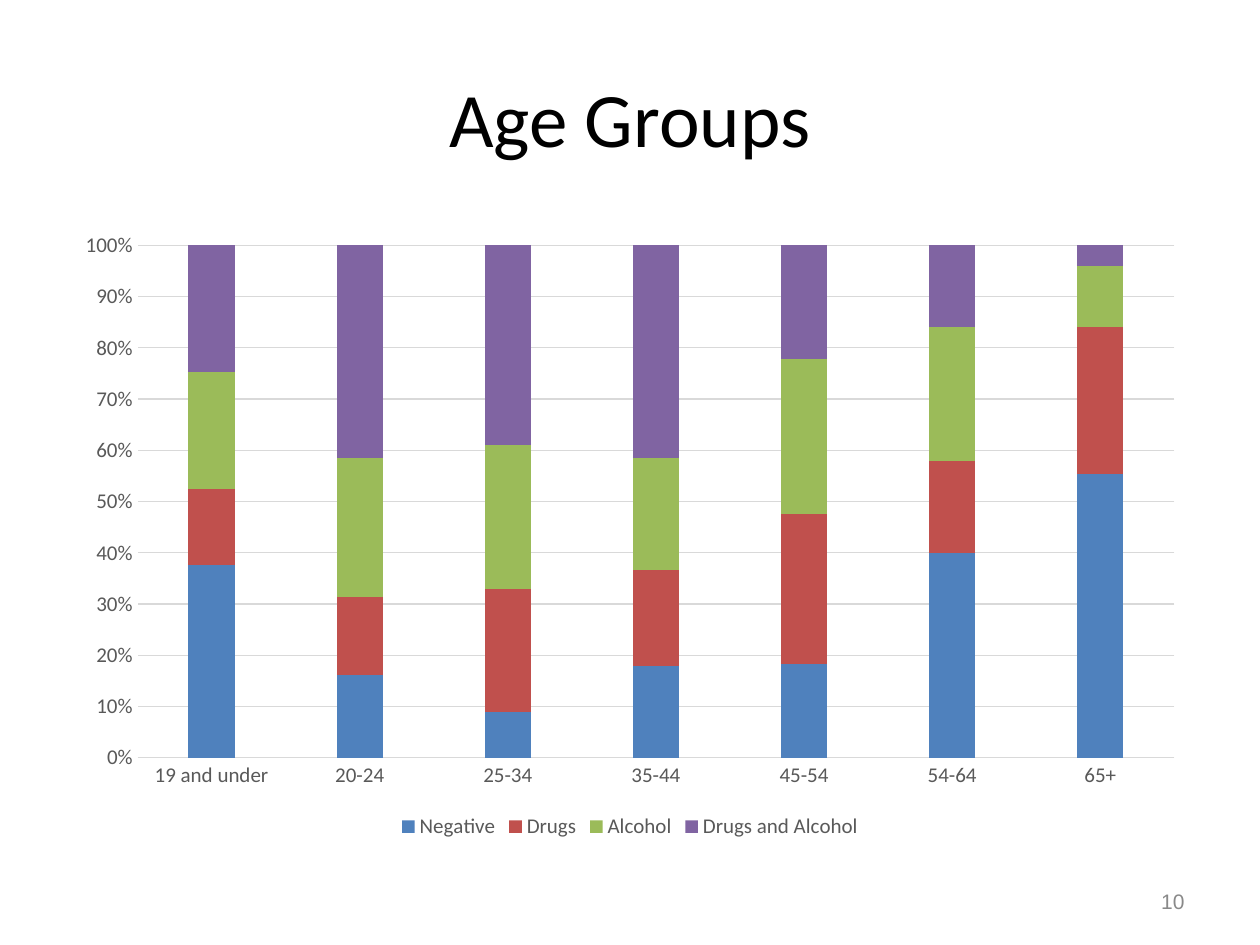
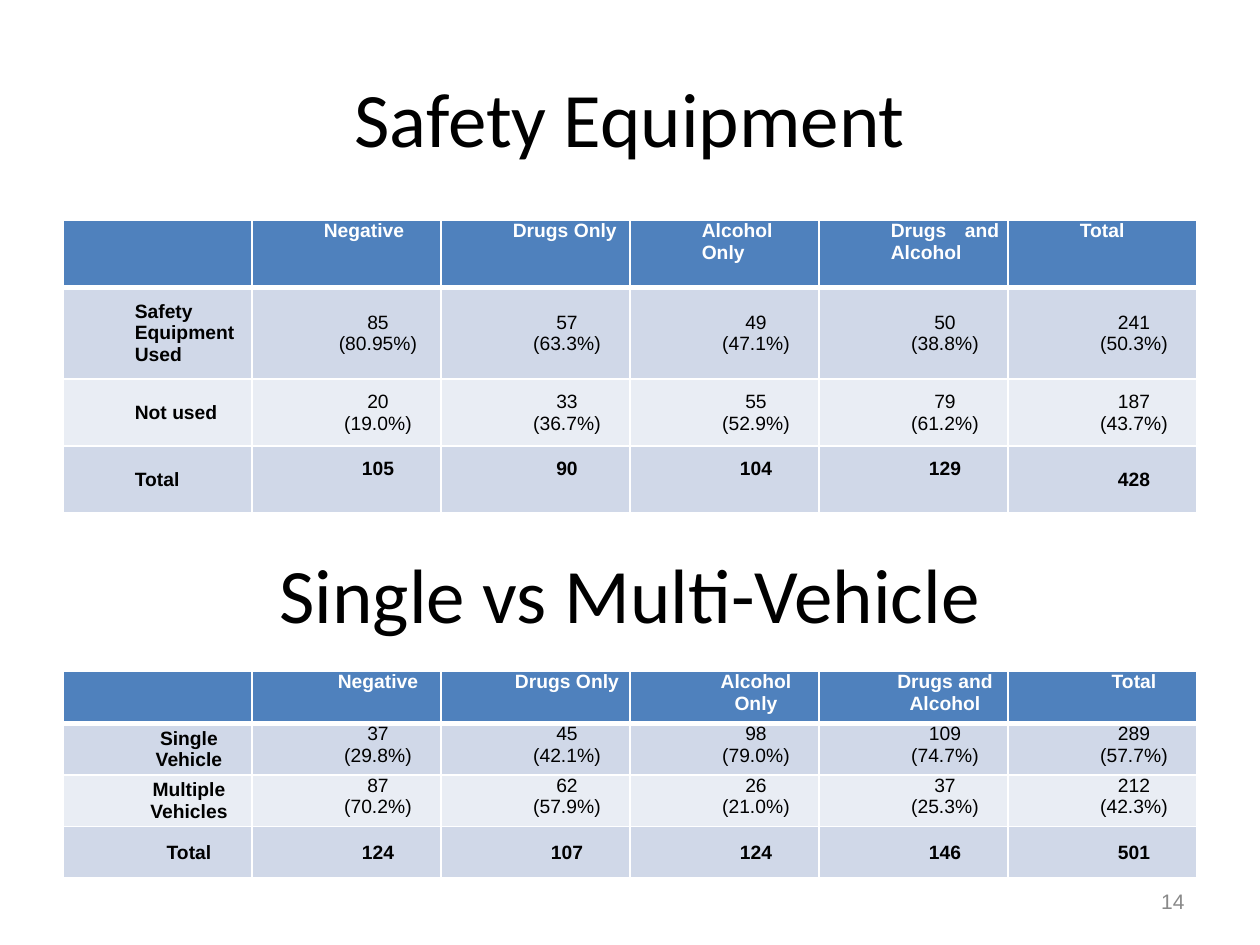
from dataclasses import dataclass

from lxml import etree
from pptx import Presentation
from pptx.chart.data import CategoryChartData
from pptx.dml.color import RGBColor
from pptx.enum.chart import XL_CHART_TYPE, XL_LEGEND_POSITION, XL_TICK_MARK
from pptx.enum.text import MSO_ANCHOR, PP_ALIGN
from pptx.oxml.ns import qn
from pptx.util import Inches, Pt

STACKED_100 = XL_CHART_TYPE.COLUMN_STACKED_100
LEGEND_BOTTOM = XL_LEGEND_POSITION.BOTTOM
NO_TICKS = XL_TICK_MARK.NONE
TOP, MIDDLE = MSO_ANCHOR.TOP, MSO_ANCHOR.MIDDLE
CENTER, RIGHT, JUSTIFY = PP_ALIGN.CENTER, PP_ALIGN.RIGHT, PP_ALIGN.JUSTIFY


@dataclass(frozen=True)
class Theme:
    heading_font: str = "Calibri"
    body_font: str = "Arial"
    title_size: float = 44
    label_size: float = 12
    cell_size: float = 11
    ink: str = "000000"
    white: str = "FFFFFF"
    chart_text: str = "595959"
    grid: str = "D9D9D9"
    page_number: str = "898989"
    header_fill: str = "4F81BD"
    band_fills: tuple = ("D0D8E8", "E9EDF4")
    series: tuple = ("4F81BD", "C0504D", "9BBB59", "8064A2")


THEME = Theme()

# Boxes: left, top, width, height in inches
TITLE_BOX = (0.5, 0.3, 9, 1.25)
NUMBER_BOX = (7.17, 6.95, 2.33, 0.4)
CHART_BOX = (0.5, 1.75, 9, 4.95)
SAFETY_BOX = (0.5, 1.75, 9, 2.33)
SUBTITLE_BOX = (0.5, 4.08, 9, 1.25)
VEHICLE_BOX = (0.5, 5.33, 9, 1.62)

AGE_GROUPS = ["19 and under", "20-24", "25-34", "35-44", "45-54", "54-64", "65+"]
AGE_SHARES = {
    "Negative": [38, 16, 9, 18, 18, 40, 56],
    "Drugs": [15, 15, 24, 19, 29, 18, 29],
    "Alcohol": [23, 27, 28, 22, 30, 26, 12],
    "Drugs and Alcohol": [25, 41, 39, 42, 22, 16, 4],
}

HEADER = ["", "Negative", "Drugs Only", "Alcohol Only", "Drugs and Alcohol", "Total"]
SAFETY_ROWS = [
    HEADER,
    ["Safety Equipment Used", "85\n(80.95%)", "57\n(63.3%)", "49\n(47.1%)",
     "50\n(38.8%)", "241\n(50.3%)"],
    ["Not used", "20\n(19.0%)", "33\n(36.7%)", "55\n(52.9%)",
     "79\n(61.2%)", "187\n(43.7%)"],
    ["Total", "105", "90", "104", "129", "428"],
]
VEHICLE_ROWS = [
    HEADER,
    ["Single Vehicle", "37\n(29.8%)", "45\n(42.1%)", "98\n(79.0%)",
     "109\n(74.7%)", "289\n(57.7%)"],
    ["Multiple Vehicles", "87\n(70.2%)", "62\n(57.9%)", "26\n(21.0%)",
     "37\n(25.3%)", "212\n(42.3%)"],
    ["Total", "124", "107", "124", "146", "501"],
]


def set_font(font, name, size, color, bold=False):
    font.name, font.size, font.bold = name, Pt(size), bold
    font.color.rgb = RGBColor.from_string(color)


def add_label(slide, box, text, align, font_name, size, color):
    frame = slide.shapes.add_textbox(*map(Inches, box)).text_frame
    frame.word_wrap = True
    frame.vertical_anchor = MIDDLE
    frame.text = text
    paragraph = frame.paragraphs[0]
    paragraph.alignment = align
    set_font(paragraph.font, font_name, size, color)


def add_heading(slide, box, text):
    add_label(slide, box, text, CENTER, THEME.heading_font, THEME.title_size, THEME.ink)


def new_slide(deck, title, number):
    """Start a slide with the shared title and page number."""
    slide = deck.slides.add_slide(deck.slide_layouts[6])
    add_heading(slide, TITLE_BOX, title)
    add_label(slide, NUMBER_BOX, str(number), RIGHT, THEME.body_font,
              THEME.label_size, THEME.page_number)
    return slide


def set_line(line, color):
    line.color.rgb = RGBColor.from_string(color)
    line.width = Pt(0.75)


def add_age_chart(slide, box):
    data = CategoryChartData()
    data.categories = AGE_GROUPS
    for name, shares in AGE_SHARES.items():
        data.add_series(name, shares)
    chart = slide.shapes.add_chart(STACKED_100, *map(Inches, box), data).chart
    chart.has_title = False
    set_font(chart.font, THEME.heading_font, THEME.label_size, THEME.chart_text)

    # Columns
    plot = chart.plots[0]
    plot.gap_width, plot.overlap, plot.vary_by_categories = 219, 100, False
    for series, color in zip(plot.series, THEME.series):
        series.format.fill.solid()
        series.format.fill.fore_color.rgb = RGBColor.from_string(color)

    # Axes
    for axis in (chart.category_axis, chart.value_axis):
        axis.major_tick_mark = axis.minor_tick_mark = NO_TICKS
        set_font(axis.tick_labels.font, THEME.heading_font, THEME.label_size,
                 THEME.chart_text)
    set_line(chart.category_axis.format.line, THEME.grid)
    share_axis = chart.value_axis
    share_axis.format.line.fill.background()
    set_line(share_axis.major_gridlines.format.line, THEME.grid)
    share_axis.tick_labels.number_format = "0%"
    share_axis.tick_labels.number_format_is_linked = False

    # Legend
    chart.has_legend = True
    chart.legend.position = LEGEND_BOTTOM
    chart.legend.include_in_layout = False
    set_font(chart.legend.font, THEME.heading_font, THEME.label_size, THEME.chart_text)


def style_cell(cell, fill, top_width, bottom_width):
    properties = cell._tc.get_or_add_tcPr()
    for side, width in (("L", 1), ("R", 1), ("T", top_width), ("B", bottom_width)):
        border = etree.SubElement(properties, qn(f"a:ln{side}"), w=str(Pt(width)))
        solid = etree.SubElement(border, qn("a:solidFill"))
        etree.SubElement(solid, qn("a:srgbClr"), val=THEME.white)
    cell.fill.solid()
    cell.fill.fore_color.rgb = RGBColor.from_string(fill)
    cell.margin_left = cell.margin_right = Inches(0.07)
    cell.margin_top = cell.margin_bottom = 0


def write_cell(cell, text, align, color, bold):
    cell.text = text
    for paragraph in cell.text_frame.paragraphs:
        indent = paragraph._p.get_or_add_pPr()
        indent.set("marL", str(Inches(0.5)))
        indent.set("indent", "0")
        paragraph.alignment = align
        set_font(paragraph.font, THEME.body_font, THEME.cell_size, color, bold)


def add_count_table(slide, box, rows, row_heights, label_align, count_anchor):
    """Header row, banded counts with shares, and a bold total row."""
    table = slide.shapes.add_table(len(rows), len(HEADER), *map(Inches, box)).table
    for column in table.columns:
        column.width = Inches(box[2] / len(HEADER))
    last = len(rows) - 1
    for r, (row, height) in enumerate(zip(rows, row_heights)):
        table.rows[r].height = Inches(height)
        is_header = r == 0
        fill = THEME.header_fill if is_header else THEME.band_fills[(r - 1) % 2]
        for c, text in enumerate(row):
            cell = table.cell(r, c)
            is_label = is_header or c == 0
            style_cell(cell, fill, 3 if r == 1 else 1, 3 if is_header else 1)
            write_cell(cell, text, label_align if is_label else CENTER,
                       THEME.white if is_header else THEME.ink, is_label or r == last)
            if is_header:
                cell.vertical_anchor = TOP
            else:
                cell.vertical_anchor = MIDDLE if c == 0 or r == last else count_anchor
    return table


def build_age_slide(deck):
    slide = new_slide(deck, "Age Groups", 10)
    add_age_chart(slide, CHART_BOX)


def build_crash_slide(deck):
    slide = new_slide(deck, "Safety Equipment", 14)
    safety = add_count_table(slide, SAFETY_BOX, SAFETY_ROWS, [0.53, 0.73, 0.53, 0.53],
                             JUSTIFY, MIDDLE)
    # Group totals sit one line above the grand total
    for column in range(1, 5):
        safety.cell(3, column).margin_bottom = Inches(0.17)

    add_heading(slide, SUBTITLE_BOX, "Single vs Multi-Vehicle")
    add_count_table(slide, VEHICLE_BOX, VEHICLE_ROWS, [0.41] * 4, CENTER, TOP)


def main():
    deck = Presentation()
    deck.slide_width, deck.slide_height = Inches(10), Inches(7.5)
    build_age_slide(deck)
    build_crash_slide(deck)
    deck.save("out.pptx")


if __name__ == "__main__":
    main()
